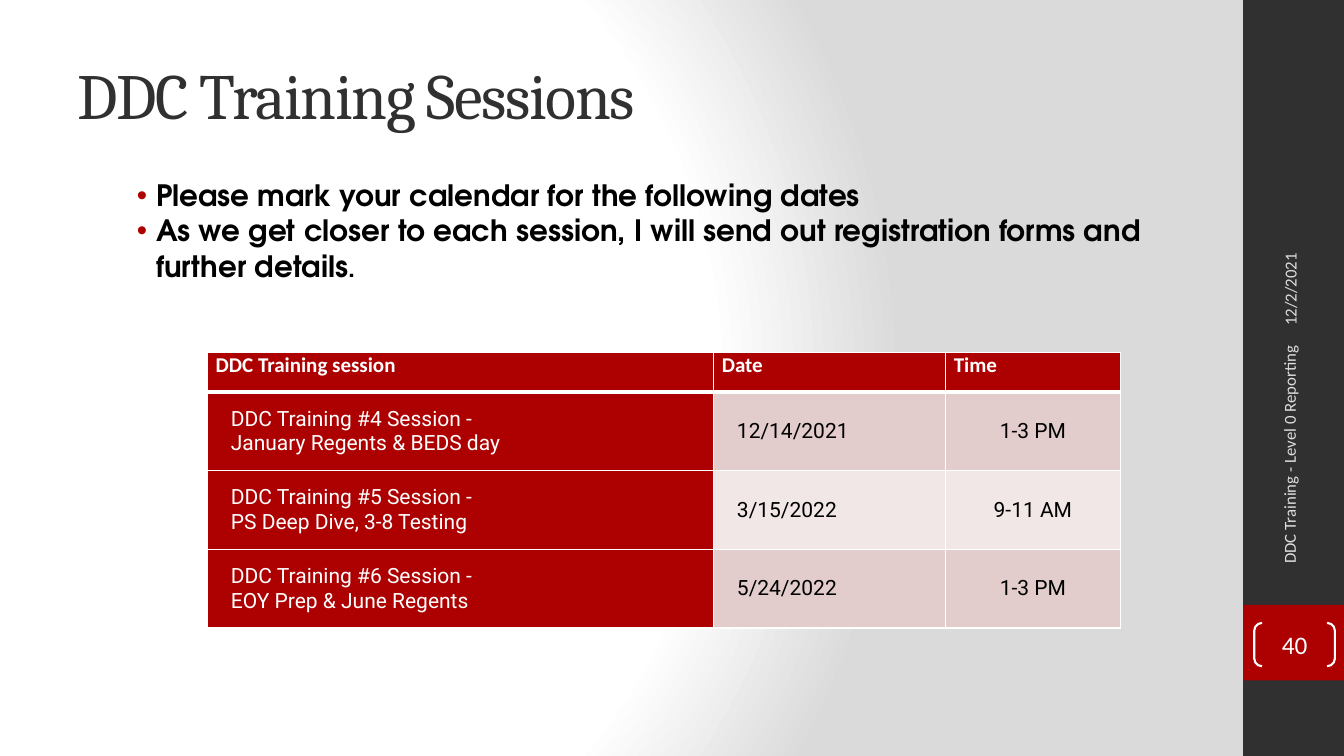
"""Build the DDC Training Sessions slide."""
from lxml.etree import SubElement
from pptx import Presentation
from pptx.dml.color import RGBColor
from pptx.enum.shapes import MSO_SHAPE
from pptx.enum.text import MSO_ANCHOR, PP_ALIGN
from pptx.oxml import parse_xml
from pptx.oxml.ns import nsdecls, qn
from pptx.util import Inches, Pt

RED, DARK, WHITE, BLACK, PALE = "AD0101", "303030", "FFFFFF", "000000", "DEDEE0"
BANDS = ["E3CCCC", "F1E7E7"]
TITLE = "DDC Training Sessions"
BULLETS = [
    [("Please mark your calendar for the following dates\u00a0".replace("\u00a0", " "), 21)],
    [("As we get closer to each session, I will send out registration forms and further details", 21),
     (".", 18)],
]
HEADERS = ["DDC Training session", "Date", "Time"]
SESSIONS = [
    ("DDC Training #4 Session - \nJanuary Regents & BEDS day", "12/14/2021", "1-3 PM"),
    ("DDC Training #5 Session - \nPS Deep Dive, 3-8 Testing", "3/15/2022", "9-11 AM"),
    ("DDC Training #6 Session - \nEOY Prep & June Regents", "5/24/2022", "1-3 PM"),
]
SIDE_LABELS = [
    ("12/2/2021", (11.46, 1.73, 2.67, 0.53), PP_ALIGN.LEFT),
    ("DDC Training - Level 0 Reporting", (11.49, 4.36, 2.59, 0.53), PP_ALIGN.RIGHT),
]
SIDE_BLOCKS = [((12.33, 0, 1, 7.5), DARK), ((12.33, 6, 1, 0.75), RED)]
COLUMN_WIDTHS = [5.02, 2.3, 1.73]
ROW_HEIGHTS = [0.39] + [0.78] * len(SESSIONS)
BACKGROUND_STOPS = [(0, WHITE), (75, WHITE), (100, "DADADA")]


def color(value):
    return RGBColor.from_string(value)


def add_text(paragraph, text, size=15, font="Calibri", fill=WHITE, bold=False,
             align=PP_ALIGN.LEFT, spacing=None):
    paragraph.alignment = align
    for index, line in enumerate(text.split("\n")):
        if index:
            paragraph.add_line_break()
        run = paragraph.add_run()
        run.text = line
        run.font.size = Pt(size)
        run.font.name = font
        run.font.bold = bold
        run.font.color.rgb = color(fill)
        if spacing:
            run.font._element.set("spc", str(spacing * 100))


def add_box(slide, box, anchor=MSO_ANCHOR.MIDDLE):
    shape = slide.shapes.add_textbox(*map(Inches, box))
    shape.text_frame.word_wrap = True
    shape.text_frame.vertical_anchor = anchor
    return shape


def add_bullet(paragraph):
    properties = paragraph._p.get_or_add_pPr()
    properties.set("marL", str(Inches(0.28)))
    properties.set("indent", str(Inches(-0.19)))
    bullet_color = SubElement(properties, qn("a:buClr"))
    SubElement(bullet_color, qn("a:srgbClr"), val=RED)
    SubElement(properties, qn("a:buFont"), typeface="Arial")
    SubElement(properties, qn("a:buChar"), char="•")


def set_background(slide):
    stops = "".join(f'<a:gs pos="{position * 1000}"><a:srgbClr val="{value}"/></a:gs>'
                    for position, value in BACKGROUND_STOPS)
    slide._element.cSld.insert(0, parse_xml(
        f'<p:bg {nsdecls("p", "a")}><p:bgPr><a:gradFill rotWithShape="1"><a:gsLst>{stops}</a:gsLst>'
        '<a:path path="circle"><a:fillToRect l="20000" t="50000" r="100000" b="50000"/></a:path>'
        '</a:gradFill><a:effectLst/></p:bgPr></p:bg>'))


def format_cell(cell, fill, left, right, top_width=1, bottom_width=1):
    cell.margin_left, cell.margin_right = Inches(left), Inches(right)
    cell.margin_top = cell.margin_bottom = 0
    properties = cell._tc.get_or_add_tcPr()
    for side, width in zip("LRTB", (1, 1, top_width, bottom_width)):
        line = SubElement(properties, qn(f"a:ln{side}"), w=str(Pt(width)))
        SubElement(SubElement(line, qn("a:solidFill")), qn("a:srgbClr"), val=WHITE)
    cell.fill.solid()
    cell.fill.fore_color.rgb = color(fill)


def add_sessions_table(slide):
    size = Inches(sum(COLUMN_WIDTHS)), Inches(sum(ROW_HEIGHTS))
    table = slide.shapes.add_table(len(ROW_HEIGHTS), len(COLUMN_WIDTHS),
                                   Inches(2.06), Inches(3.5), *size).table
    for column, width in zip(table.columns, COLUMN_WIDTHS):
        column.width = Inches(width)
    for row, height in zip(table.rows, ROW_HEIGHTS):
        row.height = Inches(height)
    for index, header in enumerate(HEADERS):
        cell = table.cell(0, index)
        format_cell(cell, RED, 0.08, 0.08, bottom_width=3)
        add_text(cell.text_frame.paragraphs[0], header, bold=True)
    for row, session in enumerate(SESSIONS, 1):
        for index, text in enumerate(session):
            cell = table.cell(row, index)
            is_name, is_time = index == 0, index == 2
            left, right = (0.08, 0.08) if is_time else (0.23, 0)
            fill = RED if is_name else BANDS[(row - 1) % 2]
            format_cell(cell, fill, left, right, top_width=3 if row == 1 else 1)
            cell.vertical_anchor = MSO_ANCHOR.MIDDLE
            add_text(cell.text_frame.paragraphs[0], text, font="Roboto",
                     fill=WHITE if is_name else BLACK,
                     align=PP_ALIGN.CENTER if is_time else PP_ALIGN.LEFT)


def add_page_number(slide):
    bracket = slide.shapes.add_shape(MSO_SHAPE.DOUBLE_BRACKET,
                                     *map(Inches, (12.44, 6.18, 0.8, 0.43)))
    bracket.adjustments[0] = 0.18
    bracket.shadow.inherit = False
    bracket.fill.background()
    bracket.line.color.rgb = color(WHITE)
    bracket.line.width = Pt(1.5)
    frame = bracket.text_frame
    frame.margin_left = frame.margin_right = frame.margin_top = frame.margin_bottom = 0
    frame.vertical_anchor = MSO_ANCHOR.MIDDLE
    add_text(frame.paragraphs[0], "40", size=18, align=PP_ALIGN.CENTER)


def main():
    presentation = Presentation()
    presentation.slide_width, presentation.slide_height = Inches(13.33), Inches(7.5)
    slide = presentation.slides.add_slide(presentation.slide_layouts[6])
    set_background(slide)
    for box, fill in SIDE_BLOCKS:
        block = slide.shapes.add_shape(MSO_SHAPE.RECTANGLE, *map(Inches, box))
        block.shadow.inherit = False
        block.fill.solid()
        block.fill.fore_color.rgb = color(fill)
        block.line.fill.background()
    title = add_box(slide, (0.67, 0.3, 11.11, 1.25))
    add_text(title.text_frame.paragraphs[0], TITLE, size=46, font="Cambria", fill=DARK, spacing=-1)
    for text, box, align in SIDE_LABELS:
        label = add_box(slide, box)
        label.rotation = 270
        add_text(label.text_frame.paragraphs[0], text, size=12, fill=PALE, align=align)
    add_page_number(slide)
    add_sessions_table(slide)
    frame = add_box(slide, (1.17, 1.71, 10.83, 1.46), MSO_ANCHOR.TOP).text_frame
    for index, runs in enumerate(BULLETS):
        paragraph = frame.add_paragraph() if index else frame.paragraphs[0]
        add_bullet(paragraph)
        for text, size in runs:
            add_text(paragraph, text, size=size, font="TeX Gyre Adventor", fill=BLACK, bold=True)
    presentation.save("out.pptx")


if __name__ == "__main__":
    main()
